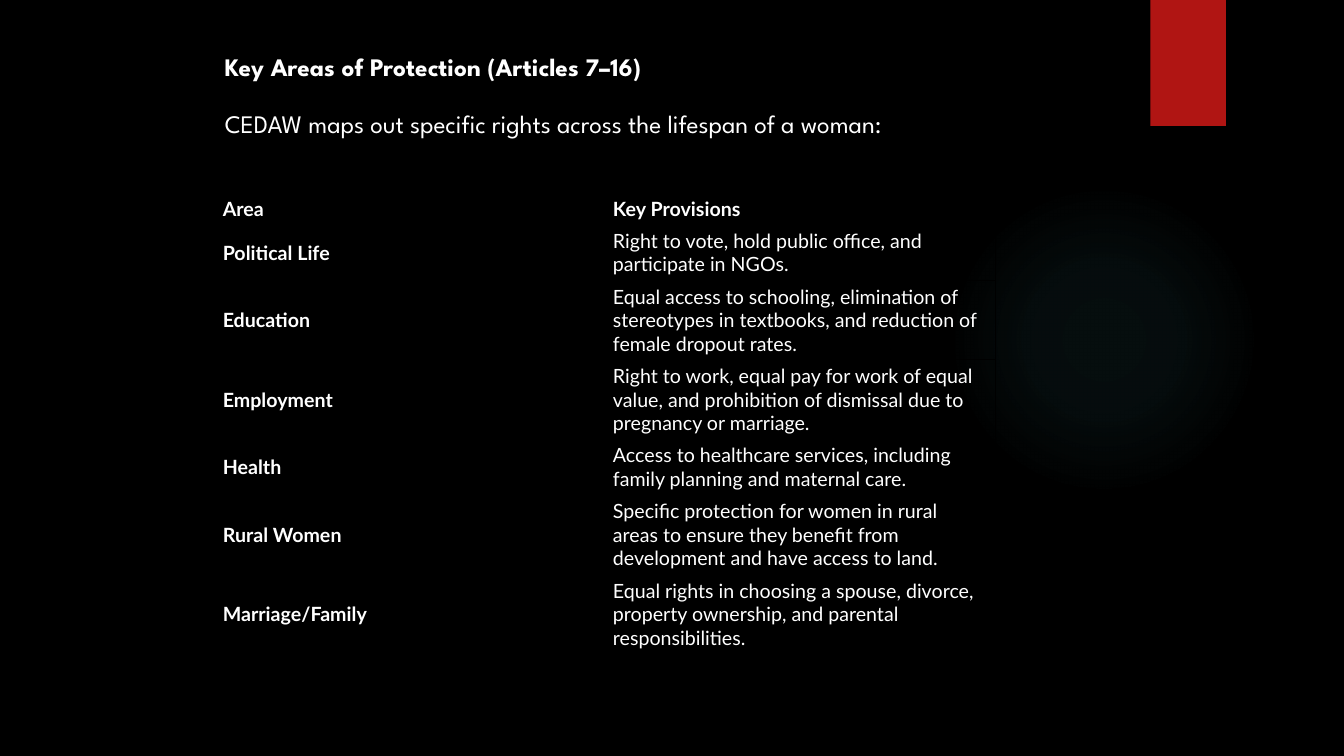
from dataclasses import dataclass

from lxml.etree import SubElement
from pptx import Presentation
from pptx.dml.color import RGBColor
from pptx.enum.shapes import MSO_SHAPE
from pptx.enum.text import MSO_ANCHOR, MSO_AUTO_SIZE, PP_ALIGN
from pptx.oxml.ns import qn
from pptx.shapes.autoshape import Shape
from pptx.slide import Slide
from pptx.table import _Cell
from pptx.text.text import _Paragraph
from pptx.util import Inches, Pt


@dataclass(frozen=True)
class Theme:
    background: str = "000000"
    text: str = "FFFFFF"
    accent: str = "B01513"
    glow: str = "50B9C1"
    border: str = "000000"
    heading_font: str = "League Spartan"
    body_font: str = "Lato"
    heading_size: int = 18
    body_size: int = 14
    border_width: float = 0.75


@dataclass(frozen=True)
class ProtectionArea:
    name: str
    provisions: str
    height: float
    is_header: bool = False


THEME = Theme()

AREAS = [
    ProtectionArea("Area", "Key Provisions", 0.32, is_header=True),
    ProtectionArea("Political Life", "Right to vote, hold public office, and participate in NGOs.", 0.55),
    ProtectionArea(
        "Education",
        "Equal access to schooling, elimination of stereotypes in textbooks, "
        "and reduction of female dropout rates.",
        0.79,
    ),
    ProtectionArea(
        "Employment",
        "Right to work, equal pay for work of equal value, "
        "and prohibition of dismissal due to pregnancy or marriage.",
        0.79,
    ),
    ProtectionArea(
        "Health",
        "Access to healthcare services, including family planning and maternal care.",
        0.55,
    ),
    ProtectionArea(
        "Rural Women",
        "Specific protection for women in rural areas to ensure they benefit "
        "from development and have access to land.",
        0.79,
    ),
    ProtectionArea(
        "Marriage/Family",
        "Equal rights in choosing a spouse, divorce, property ownership, "
        "and parental responsibilities.",
        0.79,
    ),
]


def add_span(para: _Paragraph, text: str, font: str, size: int, bold: bool) -> None:
    span = para.add_run()
    span.text = text
    span.font.name = font
    span.font.size = Pt(size)
    span.font.bold = bold
    span.font.color.rgb = RGBColor.from_string(THEME.text)


def add_plain_shape(
    page: Slide, kind: MSO_SHAPE, left: float, top: float, width: float, height: float
) -> Shape:
    shape = page.shapes.add_shape(kind, Inches(left), Inches(top), Inches(width), Inches(height))
    shape.shadow.inherit = False
    shape.line.fill.background()
    return shape


def add_glow(page: Slide) -> None:
    """Draw a circle that fades out radially from its centre."""
    glow = add_plain_shape(page, MSO_SHAPE.OVAL, 9.41, 1.83, 3.08, 3.08)
    glow.fill.gradient()
    gradient = glow.fill._xPr.find(qn("a:gradFill"))
    for child in list(gradient):
        gradient.remove(child)
    stops = SubElement(gradient, qn("a:gsLst"))
    for position, opacity in ((0, 7), (36, 6), (69, 0)):
        stop = SubElement(stops, qn("a:gs"), pos=str(position * 1000))
        color = SubElement(stop, qn("a:srgbClr"), val=THEME.glow)
        SubElement(color, qn("a:alpha"), val=str(opacity * 1000))
    circle = SubElement(gradient, qn("a:path"), path="circle")
    SubElement(circle, qn("a:fillToRect"), l="50000", t="50000", r="50000", b="50000")


def add_ribbon(page: Slide) -> None:
    ribbon = add_plain_shape(page, MSO_SHAPE.RECTANGLE, 11.41, 0, 0.75, 1.25)
    ribbon.fill.solid()
    ribbon.fill.fore_color.rgb = RGBColor.from_string(THEME.accent)


def set_borders(cell: _Cell) -> None:
    properties = cell._tc.get_or_add_tcPr()
    for side in ("lnL", "lnR", "lnT", "lnB"):
        line = SubElement(properties, qn(f"a:{side}"), w=str(Pt(THEME.border_width)))
        fill = SubElement(line, qn("a:solidFill"))
        SubElement(fill, qn("a:srgbClr"), val=THEME.border)


def fill_cell(cell: _Cell, text: str, bold: bool) -> None:
    set_borders(cell)
    cell.fill.background()
    cell.vertical_anchor = MSO_ANCHOR.MIDDLE
    cell.margin_left = cell.margin_right = Inches(0.08)
    cell.margin_top = cell.margin_bottom = Inches(0.04)
    add_span(cell.text_frame.paragraphs[0], text, THEME.body_font, THEME.body_size, bold)


def add_areas_table(page: Slide) -> None:
    total_height = sum(area.height for area in AREAS)
    table = page.shapes.add_table(
        len(AREAS), 2, Inches(2.13), Inches(1.91), Inches(7.74), Inches(total_height)
    ).table
    table.first_row = table.horz_banding = False
    for row, area in zip(table.rows, AREAS):
        row.height = Inches(area.height)
        name_cell, provisions_cell = row.cells
        fill_cell(name_cell, area.name, bold=True)
        fill_cell(provisions_cell, area.provisions, bold=area.is_header)


def write_title(page: Slide) -> None:
    title = page.shapes.title
    title.left, title.top = Inches(2.13), Inches(0.5)
    title.width, title.height = Inches(8.06), Inches(0.88)
    frame = title.text_frame
    frame.word_wrap = False
    frame.auto_size = MSO_AUTO_SIZE.SHAPE_TO_FIT_TEXT
    frame.vertical_anchor = MSO_ANCHOR.MIDDLE
    frame.margin_left = frame.margin_right = Inches(0.1)
    frame.margin_top = frame.margin_bottom = 0
    heading, intro = frame.paragraphs[0], frame.add_paragraph()
    heading.alignment = intro.alignment = PP_ALIGN.LEFT
    intro.space_before = Pt(19)
    add_span(heading, "Key Areas of Protection (Articles 7–16)", THEME.heading_font, THEME.heading_size, True)
    add_span(
        intro,
        "CEDAW maps out specific rights across the lifespan of a woman:",
        THEME.heading_font,
        THEME.heading_size,
        False,
    )


def main() -> None:
    deck = Presentation()
    deck.slide_width, deck.slide_height = Inches(13.33), Inches(7.5)
    page = deck.slides.add_slide(deck.slide_layouts.get_by_name("Title Only"))
    page.background.fill.solid()
    page.background.fill.fore_color.rgb = RGBColor.from_string(THEME.background)
    add_glow(page)
    add_ribbon(page)
    add_areas_table(page)
    write_title(page)
    deck.save("out.pptx")


if __name__ == "__main__":
    main()
